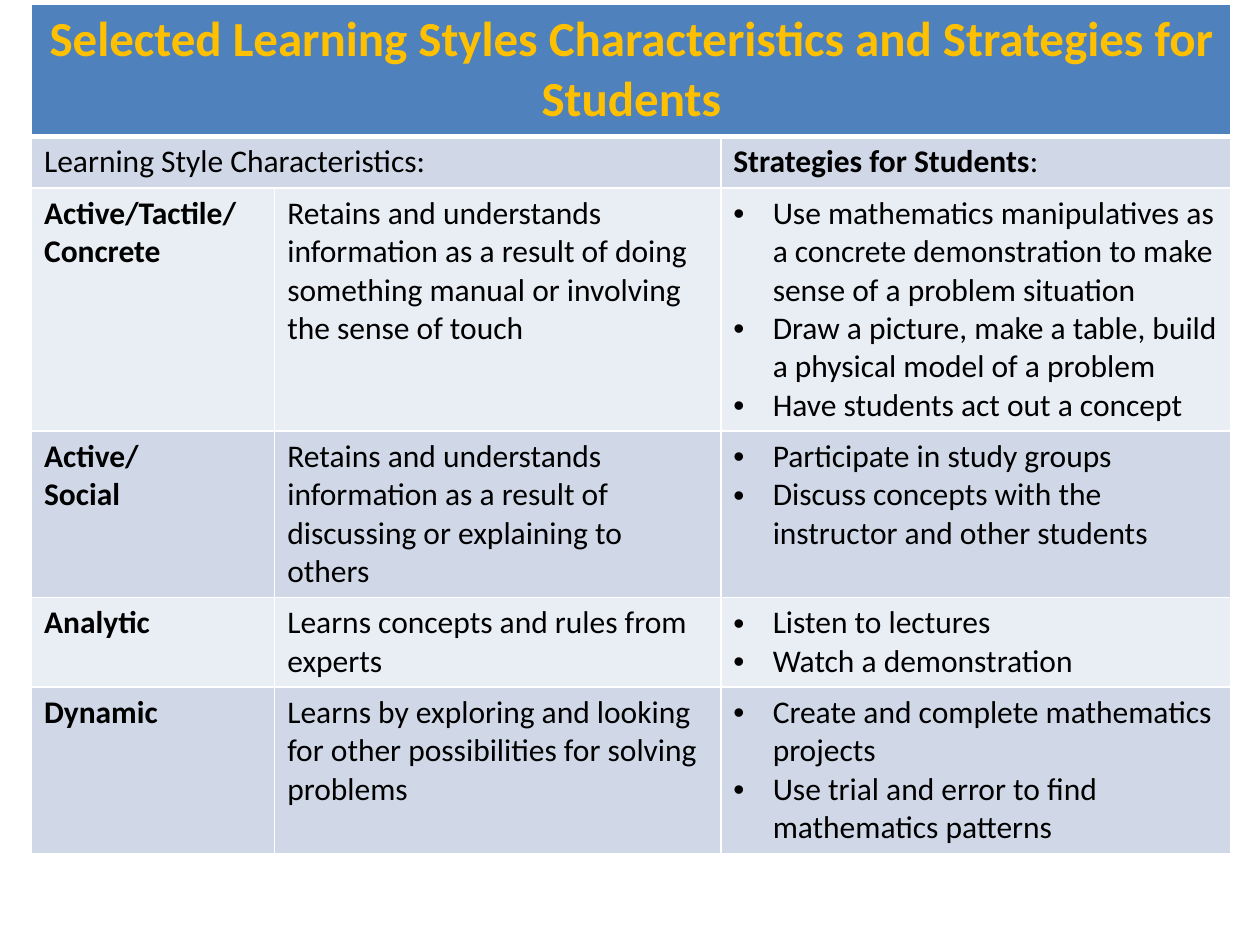
from dataclasses import dataclass

from lxml import etree
from pptx import Presentation
from pptx import util as u
from pptx.dml import color
from pptx.enum import text
from pptx.oxml import ns

FONT = "Calibri"
HEADER_FILL, DARK_BAND, LIGHT_BAND = "4F81BD", "D0D8E8", "E9EDF4"
TITLE_COLOR, BODY_COLOR, BORDER_COLOR = "FFC000", "000000", "FFFFFF"
BODY_SIZE, TITLE_SIZE = 18, 28
COLUMN_WIDTHS = (139, 254.9, 291.6)
ROW_HEIGHT = 29.5
BULLET_INDENT = 22.5


@dataclass
class Style:
    name: str
    meaning: str
    strategies: tuple[str, ...]


STYLES = (
    Style(
        "Active/Tactile/\nConcrete",
        "Retains and understands information as a result of doing "
        "something manual or involving the sense of touch",
        (
            "Use mathematics manipulatives as a concrete demonstration "
            "to make sense of a problem situation",
            "Draw a picture, make a table, build a physical model of a problem",
            "Have students act out a concept",
        ),
    ),
    Style(
        "Active/\nSocial",
        "Retains and understands information as a result of discussing "
        "or explaining to others",
        (
            "Participate in study groups",
            "Discuss concepts with the instructor and other students",
        ),
    ),
    Style(
        "Analytic",
        "Learns concepts and rules from experts",
        ("Listen to lectures", "Watch a demonstration"),
    ),
    Style(
        "Dynamic",
        "Learns by exploring and looking for other possibilities "
        "for solving problems",
        (
            "Create and complete mathematics projects",
            "Use trial and error to find mathematics patterns",
        ),
    ),
)


def rgb(value: str) -> color.RGBColor:
    return color.RGBColor.from_string(value)


def add_span(para, words: str, bold: bool = False,
             size: float = BODY_SIZE, shade: str = BODY_COLOR) -> None:
    for index, line in enumerate(words.split("\n")):
        if index:
            para.add_line_break()
        span = para.add_run()
        span.text = line
        span.font.name = FONT
        span.font.size = u.Pt(size)
        span.font.bold = bold
        span.font.color.rgb = rgb(shade)


def add_bullets(cell, items: tuple[str, ...]) -> None:
    frame = cell.text_frame
    for index, item in enumerate(items):
        para = frame.add_paragraph() if index else frame.paragraphs[0]
        props = para._p.get_or_add_pPr()
        props.set("marL", str(u.Pt(BULLET_INDENT)))
        props.set("indent", str(-u.Pt(BULLET_INDENT)))
        etree.SubElement(props, ns.qn("a:buFont"), typeface="Arial")
        etree.SubElement(props, ns.qn("a:buChar"), char="•")
        add_span(para, item)


def paint_cell(cell, fill: str, top: float, bottom: float) -> None:
    cell.fill.solid()
    cell.fill.fore_color.rgb = rgb(fill)
    props = cell._tc.get_or_add_tcPr()
    widths = {"lnL": 1, "lnR": 1, "lnT": top, "lnB": bottom}
    for index, (side, width) in enumerate(widths.items()):
        line = etree.Element(ns.qn(f"a:{side}"), w=str(u.Pt(width)))
        solid = etree.SubElement(line, ns.qn("a:solidFill"))
        etree.SubElement(solid, ns.qn("a:srgbClr"), val=BORDER_COLOR)
        props.insert(index, line)


def paint_table(table) -> None:
    for number, row in enumerate(table.rows):
        band = DARK_BAND if number % 2 else LIGHT_BAND
        fill = band if number else HEADER_FILL
        for cell in row.cells:
            paint_cell(cell, fill, 3 if number == 1 else 1, 1 if number else 3)


def add_headings(table) -> None:
    table.cell(0, 0).merge(table.cell(0, 2))
    table.cell(1, 0).merge(table.cell(1, 1))
    title = table.cell(0, 0).text_frame.paragraphs[0]
    title.alignment = text.PP_ALIGN.CENTER
    add_span(title, "Selected Learning Styles Characteristics and Strategies for Students",
             True, TITLE_SIZE, TITLE_COLOR)
    add_span(table.cell(1, 0).text_frame.paragraphs[0], "Learning Style Characteristics:")
    heading = table.cell(1, 2).text_frame.paragraphs[0]
    add_span(heading, "Strategies for Students", True)
    add_span(heading, ":")


def add_style(table, number: int, style: Style) -> None:
    name, meaning, strategies = table.rows[number].cells
    add_span(name.text_frame.paragraphs[0], style.name, True)
    add_span(meaning.text_frame.paragraphs[0], style.meaning)
    add_bullets(strategies, style.strategies)


def main() -> None:
    deck = Presentation()
    deck.slide_width, deck.slide_height = u.Pt(720), u.Pt(540)
    page = deck.slides.add_slide(deck.slide_layouts[6])
    row_count = len(STYLES) + 2
    box = page.shapes.add_table(
        row_count, len(COLUMN_WIDTHS), u.Pt(18), u.Pt(2.2),
        u.Pt(sum(COLUMN_WIDTHS)), u.Pt(ROW_HEIGHT * row_count))
    table = box.table
    for column, width in zip(table.columns, COLUMN_WIDTHS):
        column.width = u.Pt(width)
    for row in table.rows:
        row.height = u.Pt(ROW_HEIGHT)
    box.height = u.Pt(499.7)
    add_headings(table)
    for number, style in enumerate(STYLES, 2):
        add_style(table, number, style)
    paint_table(table)
    deck.save("out.pptx")


if __name__ == "__main__":
    main()
